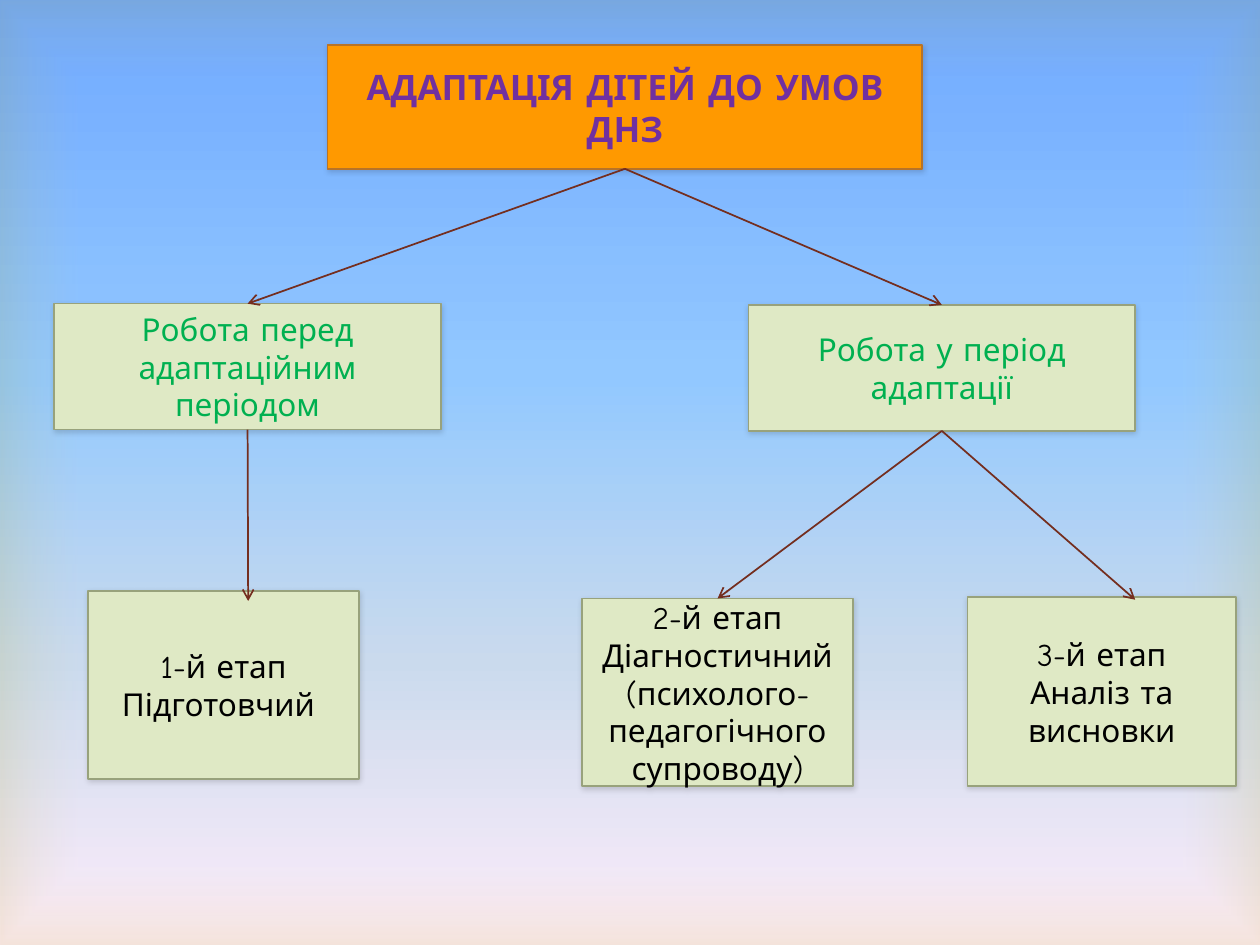
from lxml import etree
from pptx import Presentation
from pptx.dml.color import RGBColor
from pptx.enum import shapes, text
from pptx.oxml.ns import qn
from pptx.util import Inches, Pt


def rgb(code):
    return RGBColor.from_string(code)


def add(parent, tag, **attrs):
    """Append a DrawingML element and return it."""
    node = etree.SubElement(parent, qn("a:" + tag))
    for name, value in attrs.items():
        node.set(name, str(value))
    return node


prs = Presentation()
prs.slide_width, prs.slide_height = Inches(10), Inches(7.5)
slide = prs.slides.add_slide(prs.slide_layouts[5])
tree = slide.shapes

# Background and the tinted veil over it: (position, colour, opacity), in percent
slide.background.fill.gradient()
veil = tree.add_shape(shapes.MSO_SHAPE.RECTANGLE, 0, 0, prs.slide_width, prs.slide_height)
veil.shadow.inherit = False
veil.fill.gradient()
veil.line.fill.background()
title = tree.title
title.element.addprevious(veil.element)

sky = [(0, "5E9EFF", 100), (40, "85C2FF", 100), (70, "C4D6EB", 100), (100, "FFEBFA", 100)]
glow = [(83, "FFFFFF", 11), (100, "D1CA75", 23)]
for owner, stops in ((slide.background, sky), (veil, glow)):
    root = slide.element.cSld.bg if owner is not veil else veil.element
    grad = root.find(".//" + qn("a:gradFill"))
    for child in list(grad):
        grad.remove(child)
    ramp = add(grad, "gsLst")
    for pos, code, alpha in stops:
        color = add(add(ramp, "gs", pos=pos * 1000), "srgbClr", val=code)
        if alpha < 100:
            add(color, "alpha", val=alpha * 1000)
    if owner is veil:
        add(add(grad, "path", path="rect"), "fillToRect", l=50000, t=50000, r=50000, b=50000)
    else:
        add(grad, "lin", ang=90 * 60000, scaled=0)

# Boxes: name, place, wording, text colour
GREEN, BLACK = "00B050", "000000"
rows = [
    ("title", (2.6, 0.36, 4.72, 0.98), "АДАПТАЦІЯ ДІТЕЙ ДО УМОВ ДНЗ", "7030A0"),
    ("before", (0.43, 2.41, 3.07, 1), "Робота перед адаптаційним періодом", GREEN),
    ("during", (5.94, 2.42, 3.07, 1), "Робота у період адаптації", GREEN),
    ("first", (0.7, 4.69, 2.15, 1.49), "1-й етап\nПідготовчий ", BLACK),
    ("second", (4.62, 4.75, 2.15, 1.49),
     "2-й етап\nДіагностичний (психолого-педагогічного супроводу)", BLACK),
    ("third", (7.68, 4.74, 2.13, 1.5), "3-й етап\nАналіз та висновки", BLACK),
]
boxes = {}
for name, place, words, ink in rows:
    top = name == "title"
    left, upper, width, height = map(Inches, place)
    if top:
        box = title
        box.left, box.top, box.width, box.height = left, upper, width, height
    else:
        box = tree.add_shape(shapes.MSO_SHAPE.RECTANGLE, left, upper, width, height)
    boxes[name] = box
    box.fill.solid()
    box.fill.fore_color.rgb = rgb("FF9900" if top else "DFE9C5")
    box.line.color.rgb = rgb("B87327" if top else "98A27C")
    box.line.width = Pt(1)
    box.shadow.inherit = False
    shade = add(box.element.spPr.find(qn("a:effectLst")), "outerShdw",
                blurRad=Pt(3), dist=Pt(1), dir=90 * 60000, rotWithShape=0)
    add(add(shade, "srgbClr", val="000000"), "alpha", val=15000)

    frame = box.text_frame
    frame.text = words
    frame.word_wrap = True
    frame.auto_size = text.MSO_AUTO_SIZE.NONE
    frame.vertical_anchor = text.MSO_ANCHOR.MIDDLE
    for para in frame.paragraphs:
        para.alignment = text.PP_ALIGN.CENTER
        for run in para.runs:
            run.font.name = "Comic Neue"
            run.font.size = Pt(20 if top else 18)
            run.font.bold = top
            run.font.color.rgb = rgb(ink)

# Arrows run from a box's bottom to a box's top or to a free point
links = [
    ("title", "before"),
    ("title", "during"),
    ("before", (1.97, 4.77)),
    ("during", "second"),
    ("during", (9.01, 4.76)),
]
for start, end in links:
    free = end not in boxes
    x, y = map(Inches, end if free else (0, 0))
    arrow = tree.add_connector(shapes.MSO_CONNECTOR.STRAIGHT, 0, 0, x, y)
    arrow.begin_connect(boxes[start], 2)
    if not free:
        arrow.end_connect(boxes[end], 0)
    arrow.line.color.rgb = rgb("742E1F")
    arrow.line.width = Pt(1)
    add(arrow.line._get_or_add_ln(), "tailEnd", type="arrow")
    add(arrow.element.spPr, "effectLst")

prs.save("out.pptx")
